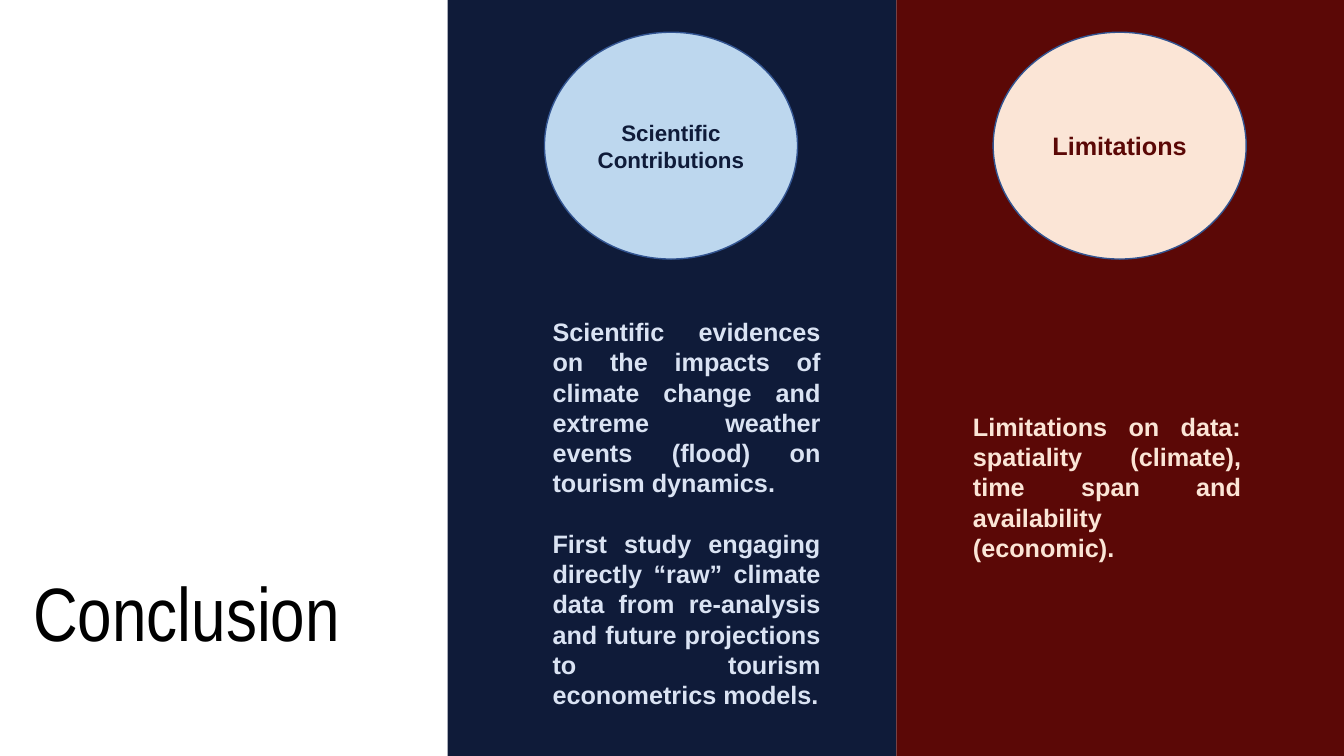
from pptx import Presentation
from pptx.dml.color import RGBColor
from pptx.enum.shapes import MSO_SHAPE
from pptx.enum.text import MSO_ANCHOR, MSO_AUTO_SIZE, PP_ALIGN
from pptx.util import Inches, Pt
from lxml import etree

RECTANGLE, OVAL = MSO_SHAPE.RECTANGLE, MSO_SHAPE.OVAL
TOP, MIDDLE = MSO_ANCHOR.TOP, MSO_ANCHOR.MIDDLE
LEFT, CENTER, JUSTIFY = PP_ALIGN.LEFT, PP_ALIGN.CENTER, PP_ALIGN.JUSTIFY
NO_AUTOFIT = MSO_AUTO_SIZE.NONE
DRAWING = "{http://schemas.openxmlformats.org/drawingml/2006/main}"
TWO_CONTENT_LAYOUT = 3

COLORS = {
    "white": "FFFFFF",
    "black": "000000",
    "navy": "0F1B39",
    "maroon": "5B0806",
    "sky": "BDD7EE",
    "ice": "DAE3F3",
    "peach": "FBE5D6",
    "outline": "325491",
}

CONTRIBUTIONS = [
    "Scientific evidences on the impacts of climate change and extreme weather "
    "events (flood) on tourism dynamics.",
    "First study engaging directly “raw” climate data from re-analysis and "
    "future projections to tourism econometrics models.",
]
LIMITATIONS = [
    "Limitations on data: spatiality (climate), time span and availability (economic).",
]


def color(name):
    return RGBColor.from_string(COLORS[name])


def place(shape, left, top, width, height):
    shape.left, shape.top = Inches(left), Inches(top)
    shape.width, shape.height = Inches(width), Inches(height)


def write_text(shape, texts, *, size, ink, font="Arial", bold=True,
               align=LEFT, anchor=TOP, gap=0):
    frame = shape.text_frame
    frame.word_wrap = True
    frame.auto_size = NO_AUTOFIT
    frame.vertical_anchor = anchor
    for index, text in enumerate(texts):
        paragraph = frame.add_paragraph() if index else frame.paragraphs[0]
        paragraph.text = text
        paragraph.alignment = align
        paragraph.space_before = Pt(gap if index else 0)
        properties = paragraph._p.get_or_add_pPr()
        properties.set("marL", "0")
        properties.set("indent", "0")
        etree.SubElement(properties, DRAWING + "buNone")
        paragraph.font.name = font
        paragraph.font.size = Pt(size)
        paragraph.font.bold = bold
        paragraph.font.color.rgb = color(ink)


def add_filled_shape(slide, kind, box, fill, outline=None):
    shape = slide.shapes.add_shape(kind, *(Inches(value) for value in box))
    shape.shadow.inherit = False
    shape.fill.solid()
    shape.fill.fore_color.rgb = color(fill)
    if outline:
        shape.line.color.rgb = color(outline)
        shape.line.width = Pt(1)
    else:
        shape.line.fill.background()
    return shape


def add_heading(slide, box, text):
    title = slide.shapes.title
    place(title, *box)
    write_text(title, [text], size=54, ink="black", font="Arial Narrow", bold=False)


def add_panel(slide, box, body, *, heading, heading_size, texts, body_box,
              background, badge, ink):
    left, top, width, height = box
    add_filled_shape(slide, RECTANGLE, box, background)
    circle = add_filled_shape(
        slide, OVAL, (left + 0.96, top + 0.32, 2.51, 2.25), badge, "outline")
    write_text(circle, [heading], size=heading_size, ink=background,
               align=CENTER, anchor=MIDDLE)
    body_left, body_top, body_width, body_height = body_box
    place(body, left + body_left, top + body_top, body_width, body_height)
    write_text(body, texts, size=18, ink=ink, align=JUSTIFY, gap=21.6)
    body.element.getparent().append(body.element)


def build_conclusion(presentation):
    slide = presentation.slides.add_slide(presentation.slide_layouts[TWO_CONTENT_LAYOUT])
    slide.background.fill.solid()
    slide.background.fill.fore_color.rgb = color("white")
    contributions, limitations = slide.placeholders[1], slide.placeholders[2]
    for placeholder in list(slide.placeholders):
        if placeholder.placeholder_format.idx > 2:
            placeholder.element.getparent().remove(placeholder.element)
    add_heading(slide, (0.23, 5.56, 4.53, 1.01), "Conclusion")
    add_panel(slide, (4.44, 0, 4.45, 7.5), contributions,
              heading="Scientific Contributions", heading_size=16,
              texts=CONTRIBUTIONS, body_box=(0.94, 3.09, 2.86, 3.74),
              background="navy", badge="sky", ink="ice")
    add_panel(slide, (8.89, 0, 4.44, 7.5), limitations,
              heading="Limitations", heading_size=18,
              texts=LIMITATIONS, body_box=(0.66, 4.03, 2.86, 1.31),
              background="maroon", badge="peach", ink="peach")


def main():
    presentation = Presentation()
    presentation.slide_width, presentation.slide_height = Inches(13.33), Inches(7.5)
    build_conclusion(presentation)
    presentation.save("out.pptx")


if __name__ == "__main__":
    main()
